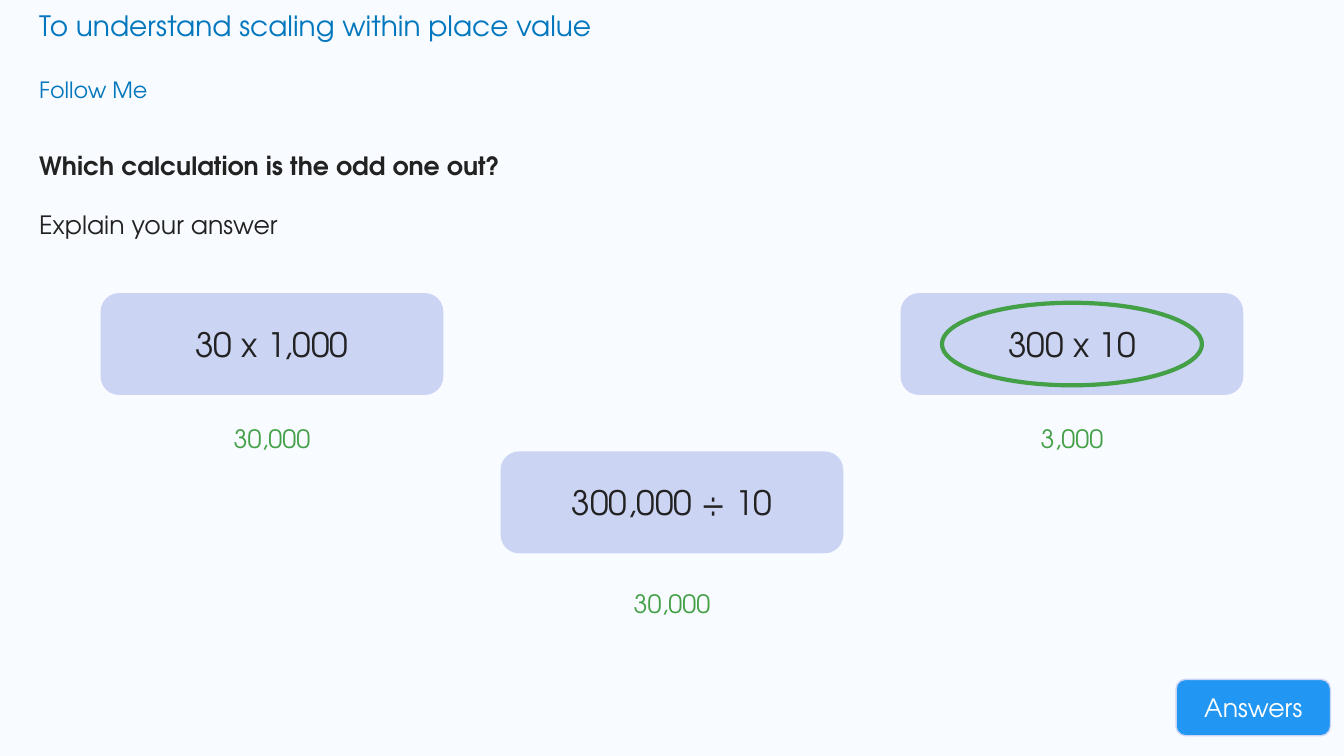
"""Build the odd-one-out place value slide."""
from pptx import Presentation
from pptx.dml.color import RGBColor
from pptx.enum.shapes import MSO_SHAPE
from pptx.enum.text import MSO_ANCHOR, PP_ALIGN
from pptx.util import Cm, Pt

FONT = "TeX Gyre Adventor"
COLORS = {"background": "F8FBFF", "heading": "0277BD", "ink": "222222", "card": "CCD4F4",
          "answer": "43A047", "button": "2196F3", "white": "FFFFFF"}
TITLE = "To understand scaling within place value"
SECTION = "Follow Me"
QUESTION = ["Which calculation is the odd one out?", "Explain your answer"]
BUTTON = "Answers"
CARDS = [
    {"sum": "30 x 1,000", "answer": "30,000", "top": 7.44, "answer_top": 10.16, "odd": False},
    {"sum": "300,000 ÷ 10", "answer": "30,000", "top": 11.43, "answer_top": 14.33, "odd": False},
    {"sum": "300 x 10", "answer": "3,000", "top": 7.44, "answer_top": 10.16, "odd": True},
]
MARGIN = 0.74
CARD_LEFT, CARD_STEP, CARD_W, CARD_H = 2.59, 10.08, 8.53, 2.46
RING_W, RING_H = 6.55, 2.08


def rgb(name):
    return RGBColor.from_string(COLORS[name])


def write(sp, lines, size, color, align=PP_ALIGN.LEFT, anchor=MSO_ANCHOR.TOP, spacing=None):
    tf = sp.text_frame
    tf.word_wrap = True
    tf.vertical_anchor = anchor
    for i, line in enumerate(lines):
        p = tf.add_paragraph() if i else tf.paragraphs[0]
        p.text = line
        p.alignment = align
        p.line_spacing = spacing
        if i:
            p.space_before = Pt(10)
        p.font.name = FONT
        p.font.size = Pt(size)
        p.font.color.rgb = rgb(color)
    return tf


def add_text(s, box, lines, size, color, **style):
    return write(s.shapes.add_textbox(*map(Cm, box)), lines, size, color, **style)


def add_panel(s, kind, box, fill, line, width):
    sp = s.shapes.add_shape(kind, *map(Cm, box))
    sp.shadow.inherit = False
    if fill:
        sp.fill.solid()
        sp.fill.fore_color.rgb = rgb(fill)
    else:
        sp.fill.background()
    sp.line.color.rgb = rgb(line)
    sp.line.width = Pt(width)
    return sp


def add_label(s, box, text, size, color, fill, width):
    sp = add_panel(s, MSO_SHAPE.ROUNDED_RECTANGLE, box, fill, "card", width)
    write(sp, [text], size, color, align=PP_ALIGN.CENTER, anchor=MSO_ANCHOR.MIDDLE)


def main():
    prs = Presentation()
    prs.slide_width, prs.slide_height = Cm(33.87), Cm(19.05)
    s = prs.slides.add_slide(prs.slide_layouts[6])
    s.background.fill.solid()
    s.background.fill.fore_color.rgb = rgb("background")

    add_text(s, (MARGIN, 0.1, 31.34, 1.12), [TITLE], 20, "heading")
    add_text(s, (MARGIN, 1.8, 7.54, 1.17), [SECTION], 16, "heading")
    tf = add_text(s, (MARGIN, 3.28, 32.61, 3.48), QUESTION, 18, "ink", spacing=1.5)
    tf.paragraphs[0].font.bold = True
    add_label(s, (29.64, 17.12, 3.89, 1.42), BUTTON, 18, "white", "button", 1)

    for i, card in enumerate(CARDS):
        left, top = CARD_LEFT + i * CARD_STEP, card["top"]
        add_label(s, (left, top, CARD_W, CARD_H), card["sum"], 24, "ink", "card", 3)
        add_text(s, (left, card["answer_top"], CARD_W, 1.27), [card["answer"]], 18, "answer",
                 align=PP_ALIGN.CENTER, spacing=1.5)
        if card["odd"]:
            ring = (left + (CARD_W - RING_W) / 2, top + (CARD_H - RING_H) / 2, RING_W, RING_H)
            add_panel(s, MSO_SHAPE.OVAL, ring, None, "answer", 3)

    prs.save("out.pptx")


if __name__ == "__main__":
    main()
